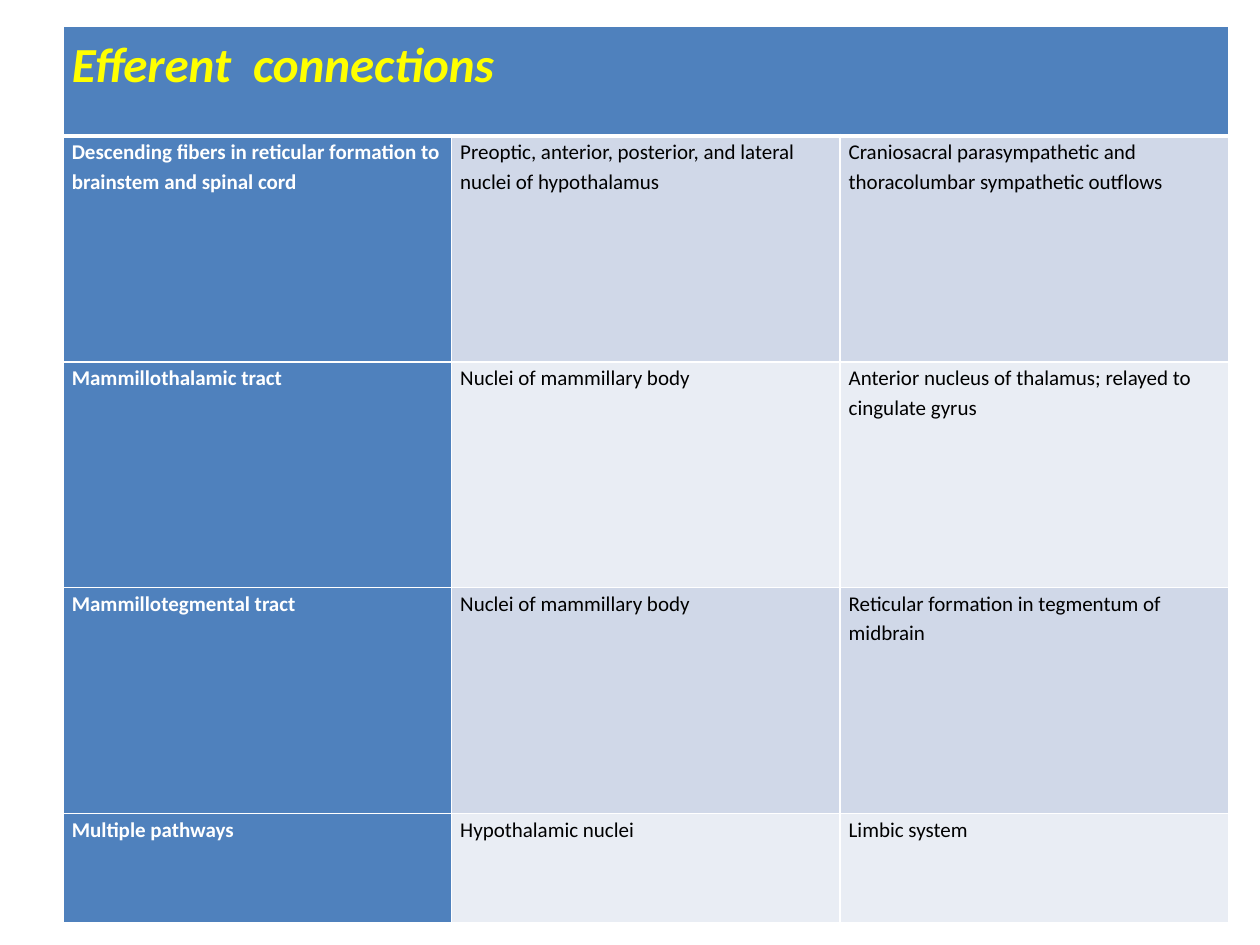
from dataclasses import dataclass

from lxml.etree import SubElement
from pptx import Presentation
from pptx.dml.color import RGBColor
from pptx.oxml.ns import qn
from pptx.table import _Cell
from pptx.util import Inches, Pt

WHITE = RGBColor(0xFF, 0xFF, 0xFF)
BLACK = RGBColor(0, 0, 0)
YELLOW = RGBColor(0xFF, 0xFF, 0)
BLUE = RGBColor(0x4F, 0x81, 0xBD)
BAND_DARK = RGBColor(0xD0, 0xD8, 0xE8)
BAND_LIGHT = RGBColor(0xE9, 0xED, 0xF4)

SLIDE_W, SLIDE_H = Inches(10), Inches(7.5)
LEFT, TOP, WIDTH = 0.05 * SLIDE_W, 0.028 * SLIDE_H, 0.925 * SLIDE_W
EDGE_ROW, PATHWAY_ROW = 0.116 * SLIDE_H, 0.239 * SLIDE_H
ROW_HEIGHTS = [EDGE_ROW, PATHWAY_ROW, PATHWAY_ROW, PATHWAY_ROW, EDGE_ROW]
COLUMNS = 3
THIN, THICK = 1, 3


@dataclass(frozen=True)
class Pathway:
    name: str
    origin: str
    destination: str


HEADING = "Efferent  connections"
PATHWAYS = [
    Pathway("Descending fibers in reticular formation to brainstem and spinal cord",
            "Preoptic, anterior, posterior, and lateral nuclei of hypothalamus",
            "Craniosacral parasympathetic and thoracolumbar sympathetic outflows"),
    Pathway("Mammillothalamic tract", "Nuclei of mammillary body",
            "Anterior nucleus of thalamus; relayed to cingulate gyrus"),
    Pathway("Mammillotegmental tract", "Nuclei of mammillary body",
            "Reticular formation in tegmentum of midbrain"),
    Pathway("Multiple pathways", "Hypothalamic nuclei", "Limbic system"),
]

HEADING_FONT = {"size": Pt(28), "bold": True, "italic": True}
NAME_FONT = {"size": Pt(12), "bold": True, "italic": False}
BODY_FONT = {"size": Pt(12), "bold": False, "italic": False}
MARGINS = {"margin_left": Inches(0.07), "margin_right": Inches(0.07),
           "margin_top": 0, "margin_bottom": 0}


def set_borders(cell: _Cell, top: int, bottom: int) -> None:
    tc_pr = cell._tc.get_or_add_tcPr()
    for side, points in {"L": THIN, "R": THIN, "T": top, "B": bottom}.items():
        line = SubElement(tc_pr, qn(f"a:ln{side}"), w=str(Pt(points)))
        fill = SubElement(line, qn("a:solidFill"))
        SubElement(fill, qn("a:srgbClr"), val=str(WHITE))


def style_cell(cell: _Cell, row: int, fill: RGBColor) -> None:
    set_borders(cell, THICK if row == 1 else THIN, THICK if row == 0 else THIN)
    cell.fill.solid()
    cell.fill.fore_color.rgb = fill
    for name, value in MARGINS.items():
        setattr(cell, name, value)


def write_cell(cell: _Cell, text: str, font: dict, color: RGBColor) -> None:
    p = cell.text_frame.paragraphs[0]
    p.line_spacing = 1.15
    r = p.add_run()
    r.text = text
    r.font.name = "Calibri"
    r.font.color.rgb = color
    for name, value in font.items():
        setattr(r.font, name, value)


def main() -> None:
    prs = Presentation()
    prs.slide_width, prs.slide_height = SLIDE_W, SLIDE_H
    s = prs.slides.add_slide(prs.slide_layouts[6])
    table = s.shapes.add_table(len(ROW_HEIGHTS), COLUMNS, int(LEFT), int(TOP),
                               int(WIDTH), int(sum(ROW_HEIGHTS))).table
    for row, height in zip(table.rows, ROW_HEIGHTS):
        row.height = int(height)

    for column in range(COLUMNS):
        style_cell(table.cell(0, column), 0, BLUE)
    table.cell(0, 0).merge(table.cell(0, COLUMNS - 1))
    write_cell(table.cell(0, 0), HEADING, HEADING_FONT, YELLOW)

    for row, pathway in enumerate(PATHWAYS, start=1):
        band = BAND_DARK if row % 2 else BAND_LIGHT
        columns = [(pathway.name, NAME_FONT, WHITE, BLUE),
                   (pathway.origin, BODY_FONT, BLACK, band),
                   (pathway.destination, BODY_FONT, BLACK, band)]
        for column, (text, font, color, fill) in enumerate(columns):
            cell = table.cell(row, column)
            style_cell(cell, row, fill)
            write_cell(cell, text, font, color)

    prs.save("out.pptx")


if __name__ == "__main__":
    main()
